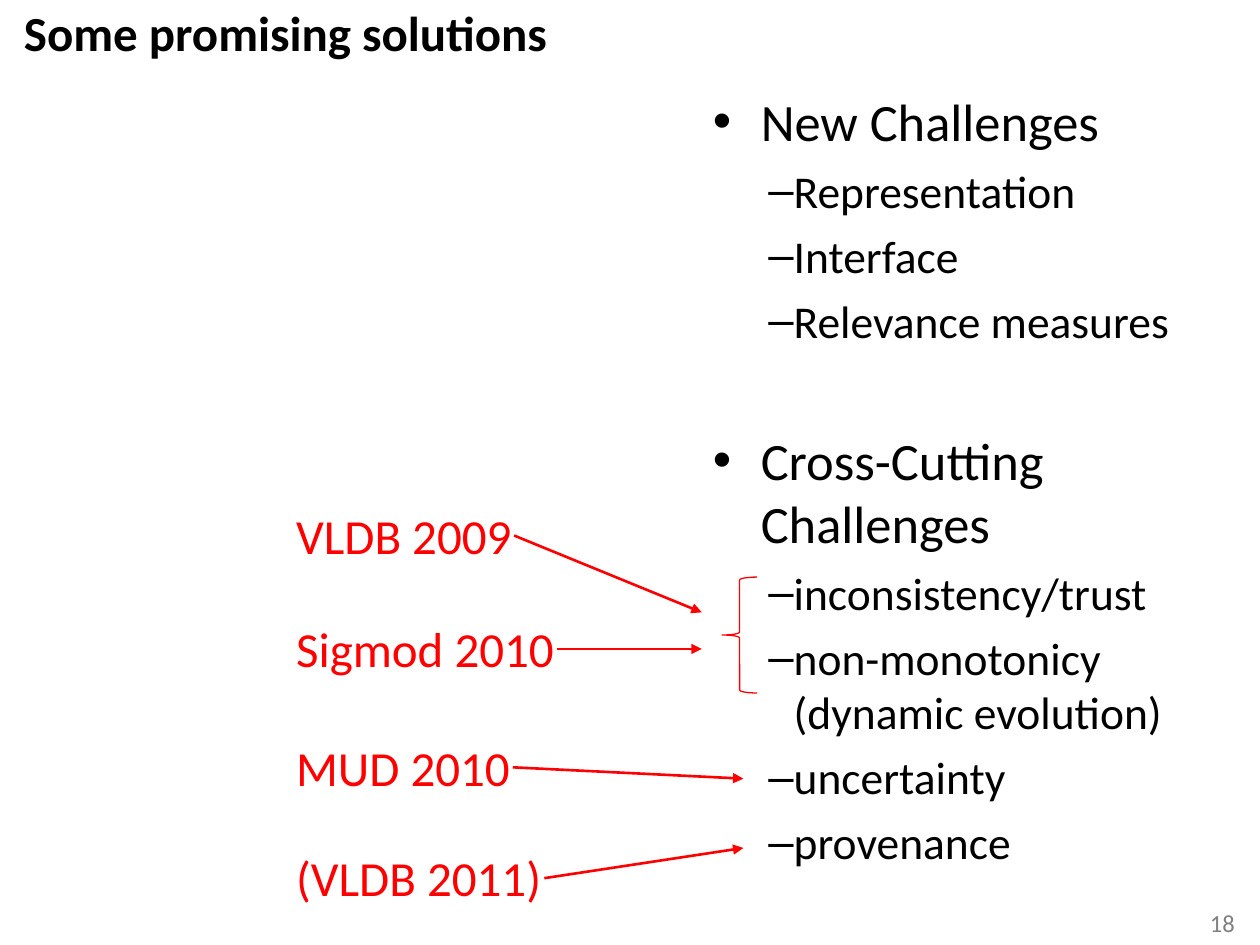
from dataclasses import dataclass

from lxml.etree import SubElement
from pptx import Presentation
from pptx.dml.color import RGBColor
from pptx.enum.shapes import MSO_CONNECTOR, MSO_SHAPE
from pptx.enum.text import PP_ALIGN
from pptx.oxml.ns import qn
from pptx.shapes.autoshape import Shape
from pptx.slide import Slide
from pptx.text.text import _Paragraph as Para
from pptx.util import Inches, Pt


@dataclass(frozen=True)
class Theme:
    font: str = "Calibri"
    black: RGBColor = RGBColor(0, 0, 0)
    white: RGBColor = RGBColor(255, 255, 255)
    red: RGBColor = RGBColor(255, 0, 0)
    gray: RGBColor = RGBColor(128, 128, 128)
    title: int = 28
    head: int = 30
    item: int = 26
    page: int = 14


@dataclass(frozen=True)
class Venue:
    text: str
    top: float
    width: float
    tip: tuple[float, float]


@dataclass(frozen=True)
class Group:
    head: str
    items: tuple[str, ...]
    gap: int = 0


THEME = Theme()
LEFT = 2.35

VENUES = (
    Venue("VLDB 2009", 4.01, 1.73, (5.57, 4.86)),
    Venue("Sigmod 2010", 4.91, 2.07, (5.57, 5.15)),
    Venue("MUD 2010", 5.85, 1.72, (5.9, 6.18)),
    Venue("(VLDB 2011)", 6.73, 1.97, (5.9, 6.73)),
)

GROUPS = (
    Group("New Challenges", ("Representation", "Interface", "Relevance measures")),
    Group(
        "Cross-Cutting Challenges",
        ("inconsistency/trust", "non-monotonicy (dynamic evolution)",
         "uncertainty", "provenance"),
        gap=40,
    ),
)


def style(para: Para, size: int, color: RGBColor, bold: bool = False) -> None:
    font = para.font
    font.name, font.size, font.bold = THEME.font, Pt(size), bold
    font.color.rgb = color


def label(slide: Slide, text: str, box: tuple[float, float, float, float],
          size: int, color: RGBColor, bold: bool = False) -> Shape:
    shape = slide.shapes.add_textbox(*map(Inches, box))
    frame = shape.text_frame
    frame.word_wrap = False
    frame.margin_left = frame.margin_right = 0
    frame.margin_top = frame.margin_bottom = 0
    para = frame.paragraphs[0]
    para.text = text
    style(para, size, color, bold)
    return shape


def arrow(slide: Slide, start: Shape, tip: tuple[float, float]) -> None:
    x, y = map(Inches, tip)
    line = slide.shapes.add_connector(MSO_CONNECTOR.STRAIGHT, x, y, x, y)
    line.begin_connect(start, 3)
    line.line.color.rgb = THEME.red
    line.line.width = Pt(1.5)
    SubElement(line.line._get_or_add_ln(), qn("a:tailEnd"), type="triangle")
    SubElement(line._element.spPr, qn("a:effectLst"))


def bullet(para: Para, mark: str, left: float, hang: float) -> None:
    props = para._p.get_or_add_pPr()
    props.set("marL", str(Inches(left)))
    props.set("indent", str(-Inches(hang)))
    SubElement(props, qn("a:buFont"), typeface="Arial")
    SubElement(props, qn("a:buChar"), char=mark)


def outline(slide: Slide, groups: tuple[Group, ...]) -> None:
    box = slide.shapes.add_textbox(
        Inches(5.56), Inches(0.66), Inches(4.04), Inches(4.66))
    frame = box.text_frame
    frame.word_wrap = True
    for group in groups:
        first = group is groups[0]
        para = frame.paragraphs[0] if first else frame.add_paragraph()
        para.text = group.head
        para.space_before, para.space_after = Pt(group.gap), Pt(6)
        bullet(para, "•", 0.38, 0.38)
        style(para, THEME.head, THEME.black)
        for text in group.items:
            para = frame.add_paragraph()
            para.text, para.level = text, 1
            para.space_after = Pt(6)
            bullet(para, "–", 0.64, 0.2)
            style(para, THEME.item, THEME.black)


def brace(slide: Slide) -> None:
    shape = slide.shapes.add_shape(
        MSO_SHAPE.LEFT_BRACE, Inches(5.73), Inches(4.58), Inches(0.28), Inches(0.92))
    shape.shadow.inherit = False
    shape.fill.solid()
    shape.fill.fore_color.rgb = THEME.white
    shape.line.color.rgb = THEME.red
    shape.line.width = Pt(0.75)


def main() -> None:
    deck = Presentation()
    deck.slide_width, deck.slide_height = Inches(10), Inches(7.5)
    slide = deck.slides.add_slide(deck.slide_layouts[6])

    # Page number and title
    page = label(slide, "18", (9.6, 7.21, 0.2, 0.24), THEME.page, THEME.gray)
    page.text_frame.paragraphs[0].alignment = PP_ALIGN.RIGHT
    label(slide, "Some promising solutions", (0.19, 0.02, 4.2, 0.47),
          THEME.title, THEME.black, bold=True)

    # Venues, each pointing at its challenge
    for venue in VENUES:
        box = (LEFT, venue.top, venue.width, 0.48)
        start = label(slide, venue.text, box, THEME.title, THEME.red)
        arrow(slide, start, venue.tip)

    # Challenges
    brace(slide)
    outline(slide, GROUPS)

    deck.save("out.pptx")


if __name__ == "__main__":
    main()
